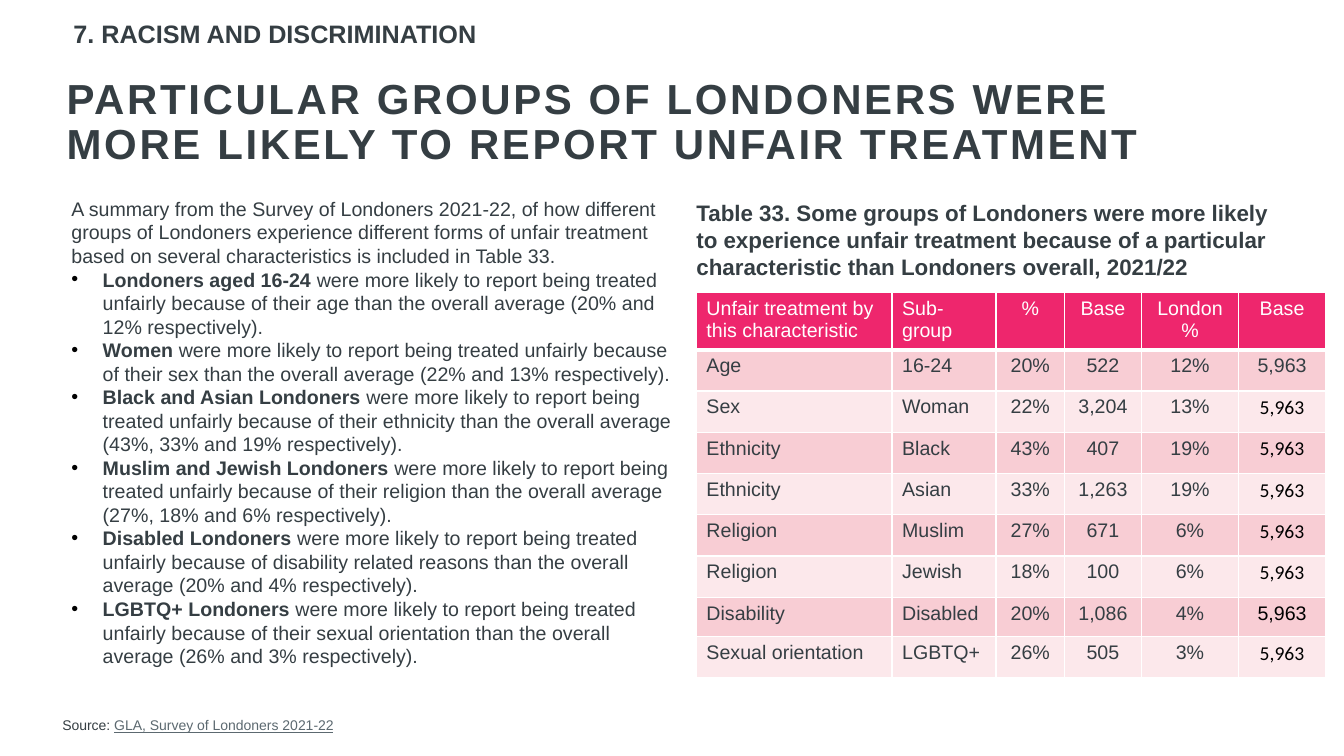
from lxml.etree import SubElement
from pptx import Presentation
from pptx.dml.color import RGBColor
from pptx.enum.text import MSO_ANCHOR, PP_ALIGN
from pptx.oxml.ns import qn
from pptx.util import Cm, Pt

DARK, WHITE, BLACK, LINK = "353E43", "FFFFFF", "000000", "5C6970"
PINK, MID_PINK, PALE_PINK = "EE266D", "F8CDD4", "FCE8EB"


def rgb(color):
    return RGBColor.from_string(color)


def style(r, size, color=DARK, bold=False, name="Arial"):
    r.font.size = Pt(size)
    r.font.name = name
    r.font.bold = bold
    r.font.color.rgb = rgb(color)


prs = Presentation()
prs.slide_width, prs.slide_height = Cm(33.87), Cm(19.05)
s = prs.slides.add_slide(prs.slide_layouts[5])

# Title
sp = s.shapes.title
sp.left, sp.top, sp.width, sp.height = Cm(1.68), Cm(1.83), Cm(29.87), Cm(2.57)
tf = sp.text_frame
tf.text = "PARTICULAR GROUPS OF LONDONERS WERE MORE LIKELY TO REPORT UNFAIR TREATMENT"
tf.margin_left = 0
tf.vertical_anchor = MSO_ANCHOR.MIDDLE
p = tf.paragraphs[0]
p.alignment = PP_ALIGN.LEFT
p.line_spacing = 0.9
style(p.runs[0], 30, bold=True)
p.runs[0].font._element.set("spc", "190")

# Section heading, summary, table caption and source: box, inset flag, size, paragraphs of (text, bold)
findings = [
    ("Londoners aged 16-24", " were more likely to report being treated unfairly because of "
     "their age than the overall average (20% and 12% respectively)."),
    ("Women", " were more likely to report being treated unfairly because of "
     "their sex than the overall average (22% and 13% respectively)."),
    ("Black and Asian Londoners ", "were more likely to report being treated unfairly because of "
     "their ethnicity than the overall average (43%, 33% and 19% respectively)."),
    ("Muslim and Jewish Londoners ", "were more likely to report being treated unfairly because of "
     "their religion than the overall average (27%, 18% and 6% respectively)."),
    ("Disabled Londoners ", "were more likely to report being treated unfairly because of "
     "disability related reasons than the overall average (20% and 4% respectively)."),
    ("LGBTQ+ Londoners", " were more likely to report being treated unfairly because of "
     "their sexual orientation than the overall average (26% and 3% respectively)."),
]
summary = ("A summary from the Survey of Londoners 2021-22, of how different groups of Londoners "
           "experience different forms of unfair treatment based on several characteristics "
           "is included in Table 33.")
caption = ("Table 33. Some groups of Londoners were more likely to experience unfair treatment "
           "because of a particular characteristic than Londoners overall, 2021/22")
text_boxes = [
    ((1.6, 0.33, 26.67, 1.02), True, 18, [[("7. RACISM AND DISCRIMINATION", True)]]),
    ((1.8, 4.96, 15.34, 12), False, 14,
     [[(summary, False)]] + [[(group, True), (finding, False)] for group, finding in findings]),
    ((17.55, 5.03, 14.91, 2.1), False, 16, [[(caption, True)]]),
    ((1.32, 17.93, 29.13, 0.68), True, 10,
     [[("Source: ", False), ("GLA, Survey of Londoners 2021-22", False)]]),
]
for box, inset, size, paragraphs in text_boxes:
    tf = s.shapes.add_textbox(*map(Cm, box)).text_frame
    tf.word_wrap = True
    if not inset:
        tf.margin_left = tf.margin_top = tf.margin_right = tf.margin_bottom = 0
    for i, parts in enumerate(paragraphs):
        p = tf.paragraphs[0] if i == 0 else tf.add_paragraph()
        if i > 0:  # bulleted finding
            pPr = p._p.get_or_add_pPr()
            pPr.set("marL", str(Cm(0.79)))
            pPr.set("indent", str(-Cm(0.79)))
            SubElement(SubElement(pPr, qn("a:buClr")), qn("a:srgbClr"), val=BLACK)
            SubElement(pPr, qn("a:buFont"), typeface="Arial")
            SubElement(pPr, qn("a:buChar"), char="•")
        for text, bold in parts:
            r = p.add_run()
            r.text = text
            style(r, size, bold=bold)

# Underlined source name, the last run added
r.font.underline = True
r.font.color.rgb = rgb(LINK)

# Table of unfair treatment
rows = [
    ("Unfair treatment by this characteristic", "Sub-group", "%", "Base", "London %", "Base"),
    ("Age", "16-24", "20%", "522", "12%", "5,963"),
    ("Sex", "Woman", "22%", "3,204", "13%", "5,963"),
    ("Ethnicity", "Black", "43%", "407", "19%", "5,963"),
    ("Ethnicity", "Asian", "33%", "1,263", "19%", "5,963"),
    ("Religion", "Muslim", "27%", "671", "6%", "5,963"),
    ("Religion", "Jewish", "18%", "100", "6%", "5,963"),
    ("Disability", "Disabled", "20%", "1,086", "4%", "5,963"),
    ("Sexual orientation", "LGBTQ+", "26%", "505", "3%", "5,963"),
]
widths = [4.93, 2.62, 1.73, 1.93, 2.46, 2.18]
table = s.shapes.add_table(len(rows), len(widths), Cm(17.55), Cm(7.37),
                           Cm(sum(widths)), Cm(9.7)).table
for column, width in zip(table.columns, widths):
    column.width = Cm(width)
for i, row in enumerate(rows):
    header = i == 0
    table.rows[i].height = Cm(1.44 if header else 0.99 if row[0] == "Disability" else 1.04)
    for j, text in enumerate(row):
        cell = table.cell(i, j)
        cell.text = text
        p = cell.text_frame.paragraphs[0]
        p.alignment = PP_ALIGN.CENTER if j > 1 else PP_ALIGN.LEFT
        overall_base = j == 5 and i > 1
        color = WHITE if header else BLACK if overall_base else DARK
        name = "Calibri" if overall_base and row[0] != "Disability" else "Arial"
        style(p.runs[0], 14, color, name=name)
        # White borders go before the fill in the cell properties
        tcPr = cell._tc.get_or_add_tcPr()
        for side in ("lnL", "lnR", "lnT", "lnB"):
            weight = 3 if header and side == "lnB" else 1
            ln = SubElement(tcPr, qn(f"a:{side}"), w=str(Pt(weight)))
            SubElement(SubElement(ln, qn("a:solidFill")), qn("a:srgbClr"), val=WHITE)
        cell.fill.solid()
        cell.fill.fore_color.rgb = rgb(PINK if header else MID_PINK if i % 2 else PALE_PINK)

prs.save("out.pptx")
